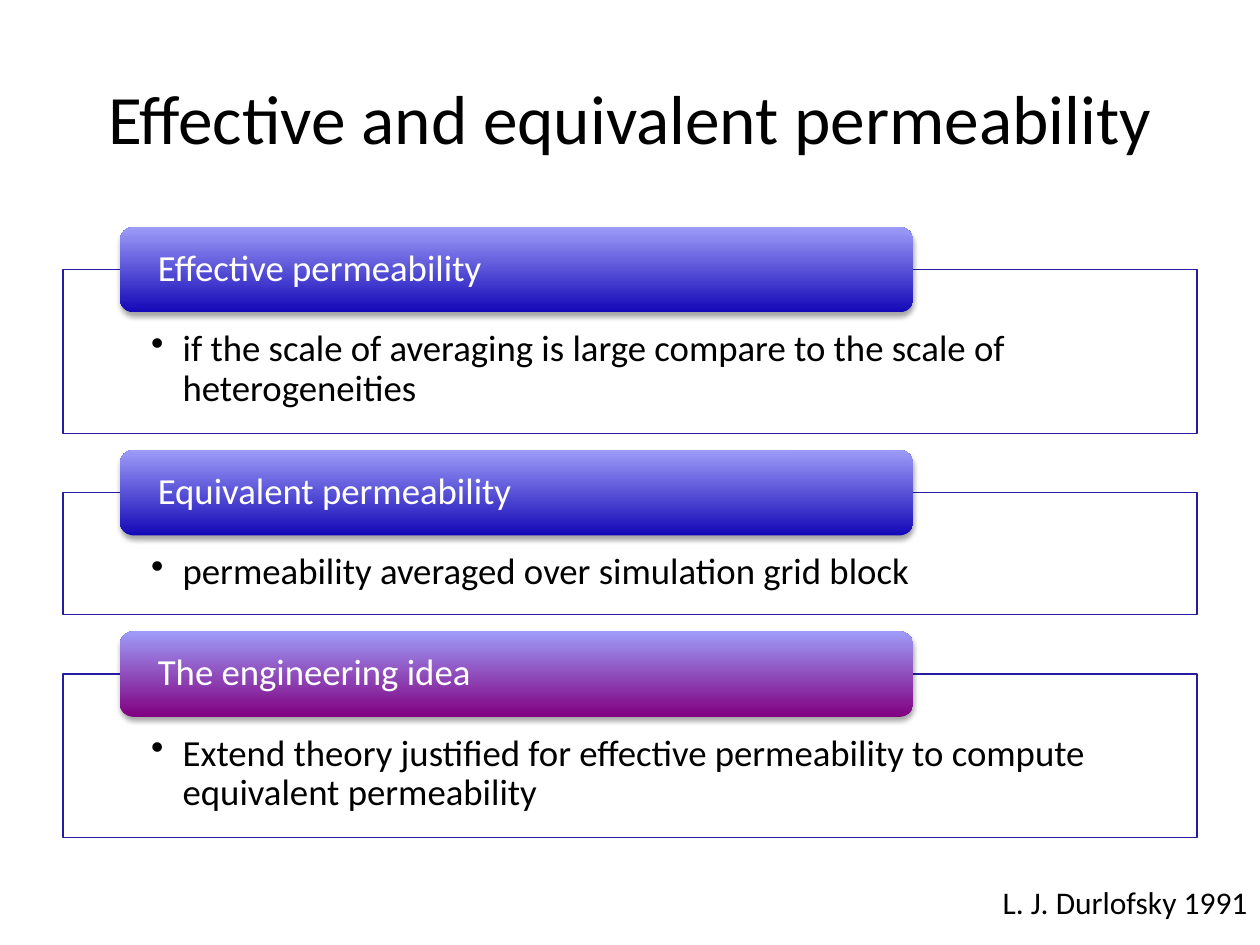
from dataclasses import dataclass
from typing import Any

import pptx
import pptx.dml.color
import pptx.enum.shapes
import pptx.enum.text
import pptx.oxml
import pptx.oxml.ns
import pptx.util
from pptx.dml.color import RGBColor
from pptx.util import Inches

BLACK = RGBColor(0x00, 0x00, 0x00)
WHITE = RGBColor(0xFF, 0xFF, 0xFF)
OUTLINE = RGBColor(0x25, 0x1C, 0xA3)
BLUE = RGBColor(0x13, 0x08, 0xB7)
PURPLE = RGBColor(0x80, 0x00, 0x80)
LAVENDER = RGBColor(0x9E, 0x9C, 0xF8)

FONT = "Calibri"
SHAPES = pptx.enum.shapes.MSO_SHAPE
ANCHOR = pptx.enum.text.MSO_ANCHOR
ALIGN = pptx.enum.text.PP_ALIGN
AUTO_SIZE = pptx.enum.text.MSO_AUTO_SIZE

PANEL_LEFT, PANEL_WIDTH = 0.5, 9
HEADER_LEFT, HEADER_WIDTH, HEADER_HEIGHT = 0.95, 6.3, 0.68
FIRST_HEADER_TOP = 1.8
SECTION_GAP = 0.13

PANEL_FRAME = {
    "word_wrap": True,
    "vertical_anchor": ANCHOR.TOP,
    "margin_left": Inches(0.7),
    "margin_right": Inches(0.7),
    "margin_top": Inches(0.48),
    "margin_bottom": Inches(0.16),
}
HEADER_FRAME = {
    "word_wrap": True,
    "vertical_anchor": ANCHOR.MIDDLE,
    "margin_left": Inches(0.27),
    "margin_right": Inches(0.27),
    "margin_top": Inches(0.03),
    "margin_bottom": Inches(0.03),
}
TITLE_FRAME = {"word_wrap": True, "vertical_anchor": ANCHOR.MIDDLE}
CITATION_FRAME = {"word_wrap": False, "auto_size": AUTO_SIZE.SHAPE_TO_FIT_TEXT}
BODY_PARAGRAPH = {"alignment": ALIGN.LEFT, "line_spacing": 0.9}


@dataclass
class Section:
    header: str
    body: str
    panel_height: float
    base_color: RGBColor


SECTIONS = [
    Section(
        "Effective permeability",
        "if the scale of averaging is large compare to the scale of heterogeneities",
        1.3,
        BLUE,
    ),
    Section(
        "Equivalent permeability",
        "permeability averaged over simulation grid block",
        0.97,
        BLUE,
    ),
    Section(
        "The engineering idea",
        "Extend theory justified for effective permeability to compute equivalent permeability",
        1.3,
        PURPLE,
    ),
]


def apply_format(target: Any, values: dict[str, Any]) -> None:
    for name, value in values.items():
        setattr(target, name, value)


def xml_element(markup: str) -> Any:
    """Parse markup whose root element still lacks the DrawingML namespace."""
    tag, rest = markup[1:].split(" ", 1)
    return pptx.oxml.parse_xml(f"<{tag} {pptx.oxml.ns.nsdecls('a')} {rest}")


def write_text(
    shape: Any,
    text: str,
    size: float,
    color: RGBColor,
    frame_format: dict[str, Any],
    paragraph_format: dict[str, Any],
    bullet: bool = False,
) -> None:
    apply_format(shape.text_frame, frame_format)
    paragraph = shape.text_frame.paragraphs[0]
    paragraph.text = text
    apply_format(paragraph, paragraph_format)
    if bullet:
        properties = paragraph._p.get_or_add_pPr()
        properties.set("marL", str(Inches(0.25)))
        properties.set("indent", str(Inches(-0.25)))
        properties.append(xml_element('<a:buChar char="•"/>'))
    font = paragraph.runs[0].font
    apply_format(font, {"name": FONT, "size": pptx.util.Pt(size)})
    font.color.rgb = color


def add_panel(slide: Any, section: Section, top: float) -> None:
    panel = slide.shapes.add_shape(
        SHAPES.RECTANGLE,
        Inches(PANEL_LEFT),
        Inches(top),
        Inches(PANEL_WIDTH),
        Inches(section.panel_height),
    )
    panel.fill.solid()
    panel.fill.fore_color.rgb = WHITE
    fill_color = panel._element.spPr.find(".//" + pptx.oxml.ns.qn("a:srgbClr"))
    fill_color.append(xml_element('<a:alpha val="90000"/>'))
    panel.line.color.rgb = OUTLINE
    panel.line.width = pptx.util.Pt(0.75)
    panel.shadow.inherit = False
    write_text(panel, section.body, 21, BLACK, PANEL_FRAME, BODY_PARAGRAPH, bullet=True)


def add_header(slide: Any, section: Section, top: float) -> None:
    header = slide.shapes.add_shape(
        SHAPES.ROUNDED_RECTANGLE,
        Inches(HEADER_LEFT),
        Inches(top),
        Inches(HEADER_WIDTH),
        Inches(HEADER_HEIGHT),
    )
    header.fill.gradient()
    header.fill.gradient_angle = 90
    for stop, color in zip(header.fill.gradient_stops, (section.base_color, LAVENDER)):
        stop.color.rgb = color
    header.line.fill.background()
    header.shadow.inherit = False
    effects = header._element.spPr.find(pptx.oxml.ns.qn("a:effectLst"))
    effects.append(
        xml_element(
            f'<a:outerShdw blurRad="{pptx.util.Pt(3.1)}" dist="{pptx.util.Pt(1.8)}" '
            'dir="5400000" rotWithShape="0"><a:srgbClr val="000000">'
            '<a:alpha val="35000"/></a:srgbClr></a:outerShdw>'
        )
    )
    write_text(header, section.header, 21, WHITE, HEADER_FRAME, BODY_PARAGRAPH)


def main() -> None:
    presentation = pptx.Presentation()
    presentation.slide_width = Inches(10)
    presentation.slide_height = Inches(7.5)
    slide = presentation.slides.add_slide(presentation.slide_layouts[6])

    title = slide.shapes.add_textbox(Inches(0.5), Inches(0.3), Inches(9), Inches(1.25))
    write_text(
        title,
        "Effective and equivalent permeability",
        39.6,
        BLACK,
        TITLE_FRAME,
        {"alignment": ALIGN.CENTER},
    )

    header_top = FIRST_HEADER_TOP
    for section in SECTIONS:
        panel_top = header_top + HEADER_HEIGHT / 2
        add_panel(slide, section, panel_top)
        add_header(slide, section, header_top)
        header_top = panel_top + section.panel_height + SECTION_GAP

    citation = slide.shapes.add_textbox(
        Inches(7.86), Inches(6.96), Inches(2.17), Inches(0.4)
    )
    write_text(citation, "L. J. Durlofsky 1991", 18, BLACK, CITATION_FRAME, {})

    presentation.save("out.pptx")


if __name__ == "__main__":
    main()
